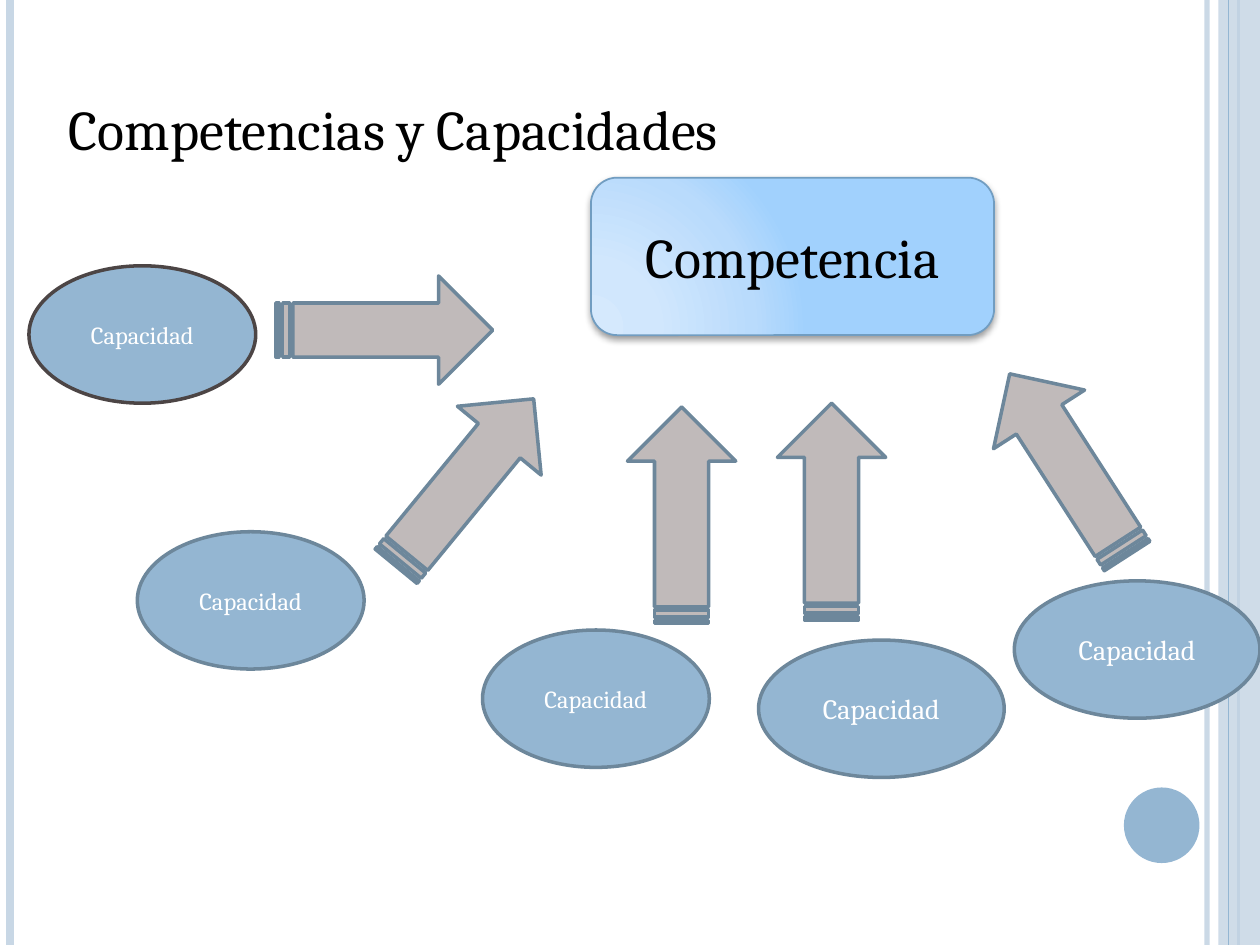
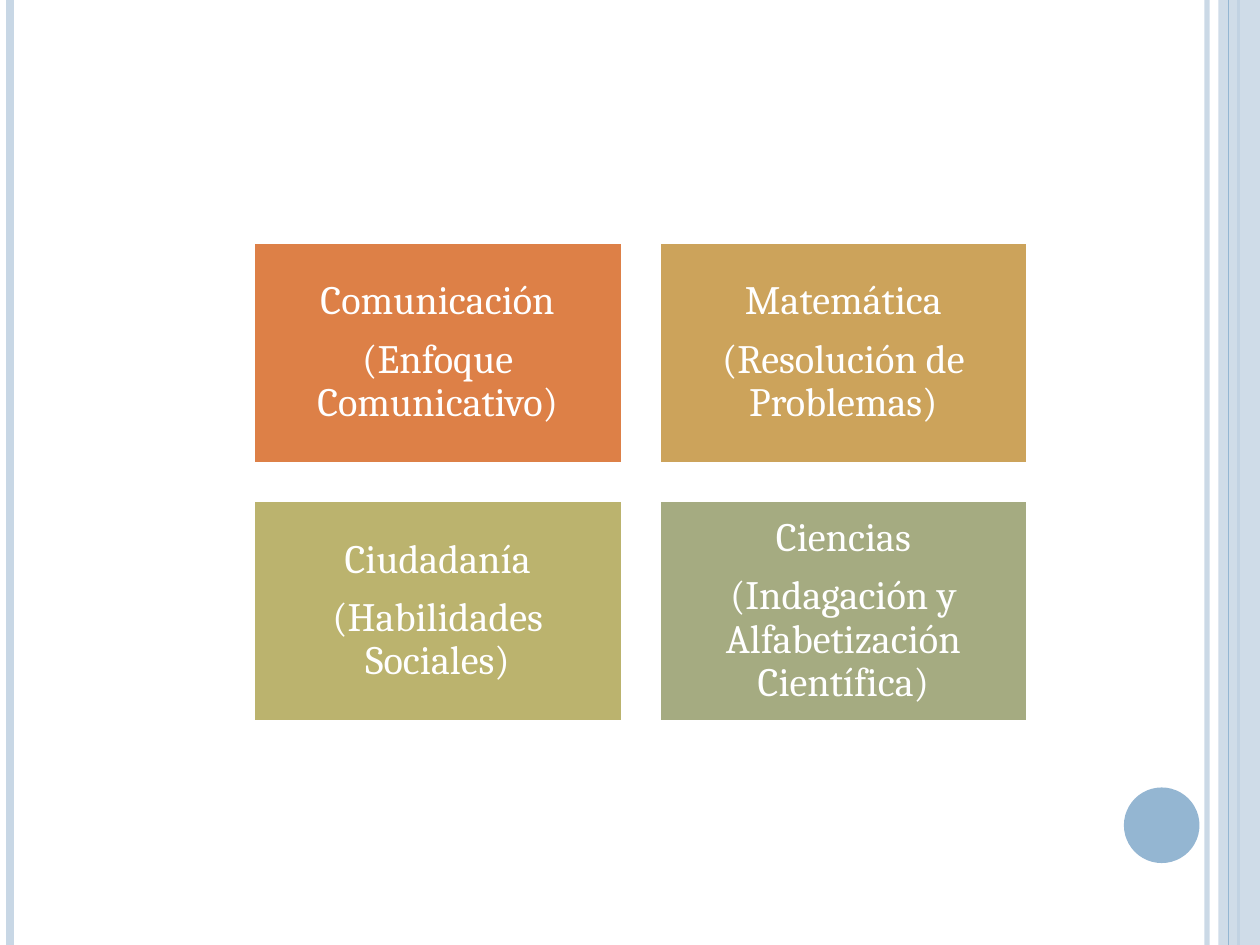
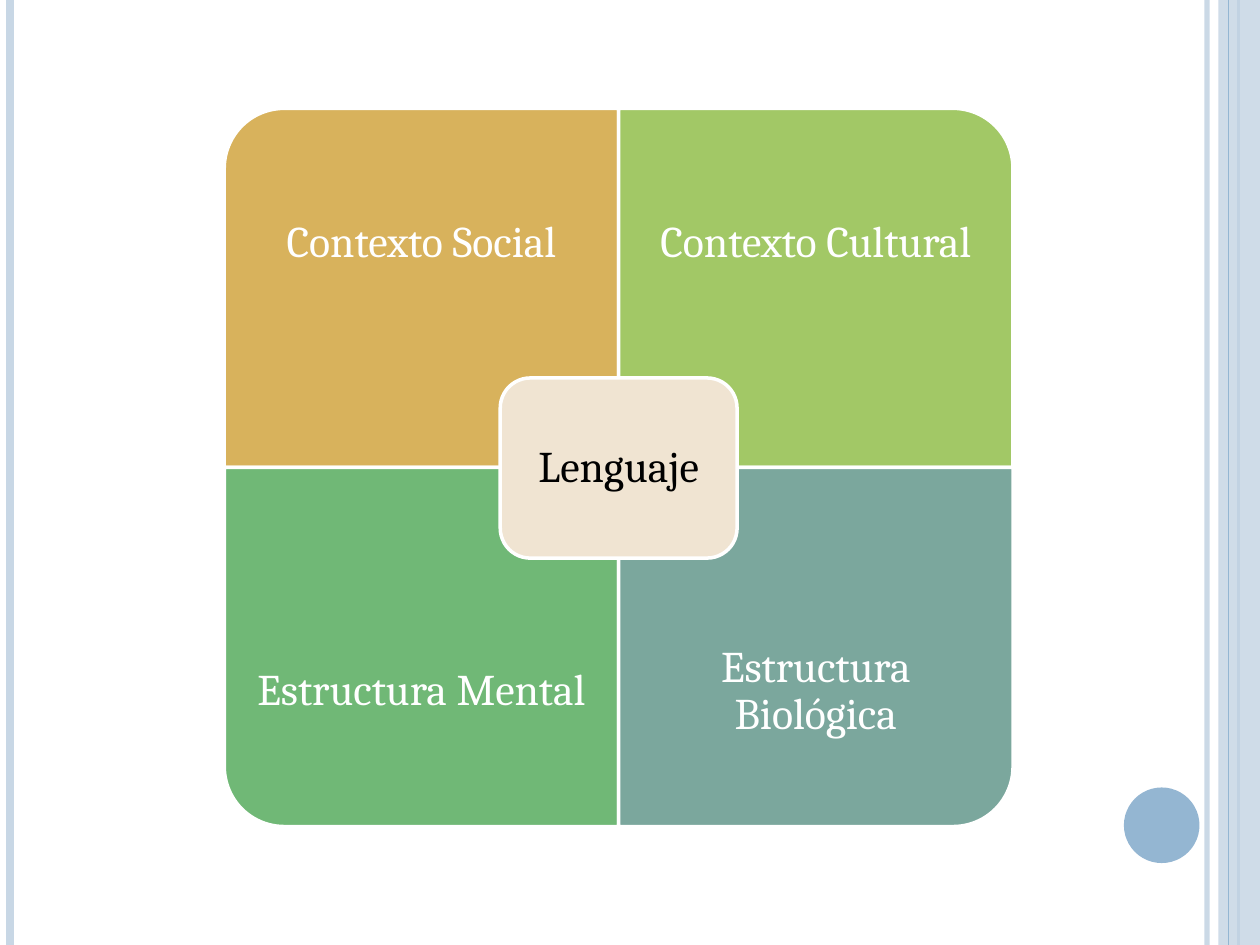
from typing import NamedTuple

from pptx import Presentation
from pptx.dml.color import RGBColor
from pptx.enum.shapes import MSO_CONNECTOR, MSO_SHAPE
from pptx.enum.text import MSO_ANCHOR, PP_ALIGN
from pptx.oxml import parse_xml
from pptx.oxml.ns import nsdecls, qn
from pptx.oxml.xmlchemy import OxmlElement
from pptx.util import Inches, Pt

FONT = "Cambria"
WHITE = "FFFFFF"
BLACK = "000000"
BLUE = "94B6D2"
PALE_BLUE = "C8D7E5"
SLATE = "6D879B"
ARROW_GREY = "C0BABA"
SLIDE_WIDTH, SLIDE_HEIGHT = 10, 7.5


class Box(NamedTuple):
    """Left, top, width and height in inches."""
    left: float
    top: float
    width: float
    height: float

    def lengths(self) -> tuple:
        """Return the four measures as lengths."""
        return tuple(Inches(value) for value in self)


class Rail(NamedTuple):
    """A vertical line that runs the full height of the slide."""
    x: float
    color: str
    width: float
    opacity: int = 100


class Arrow(NamedTuple):
    """A striped arrow, turned about its centre."""
    left: float
    top: float
    rotation: float


class Capacity(NamedTuple):
    """An ellipse that stands for one capacity."""
    left: float
    top: float
    width: float = 1.8
    size: int = 14
    outline: str = SLATE


class Area(NamedTuple):
    """A curriculum area with its approach."""
    name: str
    approach: str
    color: str


class Quadrant(NamedTuple):
    """A quarter of the language matrix."""
    label: str
    color: str
    rotation: int


LOWER_RAILS = [Rail(9.58, PALE_BLUE, 3, 93), Rail(0.08, PALE_BLUE, 4.5), Rail(9.83, BLUE, 1.5)]
UPPER_RAIL = Rail(9.75, BLUE, 0.75)

ARROWS = [
    Arrow(2.19, 2.19, 0),
    Arrow(2.83, 3.4, 309.4),
    Arrow(4.55, 3.66, 270),
    Arrow(5.74, 3.63, 270),
    Arrow(7.62, 3.26, 237.2),
]
CAPACITIES = [
    Capacity(0.23, 2.11, outline="4C4545"),
    Capacity(1.09, 4.22),
    Capacity(3.83, 5),
    Capacity(6.02, 5.08, 1.95, 16),
    Capacity(8.05, 4.61, 1.95, 16),
]
AREAS = [
    Area("Comunicación", "(Enfoque Comunicativo)", "DD8047"),
    Area("Matemática", "(Resolución de Problemas)", "CCA35B"),
    Area("Ciudadanía", "(Habilidades Sociales)", "BBB36E"),
    Area("Ciencias", "(Indagación y Alfabetización Científica)", "A5AB81"),
]
QUADRANTS = [
    Quadrant("Contexto Social", "D8B25C", 270),
    Quadrant("Contexto Cultural", "A2C866", 0),
    Quadrant("Estructura Mental", "70B876", 180),
    Quadrant("Estructura Biológica", "7BA79D", 90),
]


def rgb(color: str) -> RGBColor:
    """Turn a hex string into a colour."""
    return RGBColor.from_string(color)


def set_opacity(properties, opacity: int) -> None:
    """Make every plain colour below the given properties translucent."""
    for color in properties.iter(qn("a:srgbClr")):
        alpha = OxmlElement("a:alpha")
        alpha.set("val", str(opacity * 1000))
        color.append(alpha)


def write(shape, *texts: str, size: float = 14, color: str = WHITE, inset: float | None = None,
          line_spacing: float | None = None, gap: float = 0,
          anchor: MSO_ANCHOR = MSO_ANCHOR.MIDDLE) -> None:
    """Write centred paragraphs into a shape."""
    frame = shape.text_frame
    frame.word_wrap = True
    frame.vertical_anchor = anchor
    if inset is not None:
        frame.margin_left = frame.margin_right = Inches(inset)
        frame.margin_top = frame.margin_bottom = Inches(inset)
    for index, text in enumerate(texts):
        paragraph = frame.add_paragraph() if index else frame.paragraphs[0]
        paragraph.alignment = PP_ALIGN.CENTER
        if line_spacing:
            paragraph.line_spacing = line_spacing
        if index:
            paragraph.space_before = Pt(gap)
        run = paragraph.add_run()
        run.text = text
        run.font.name = FONT
        run.font.size = Pt(size)
        run.font.color.rgb = rgb(color)


def add_figure(slide, kind: MSO_SHAPE, box: Box, fill: str, outline: str | None = None,
               width: float = 2, rotation: float = 0):
    """Add a flat preset shape."""
    shape = slide.shapes.add_shape(kind, *box.lengths())
    shape.shadow.inherit = False
    shape.rotation = rotation
    shape.fill.solid()
    shape.fill.fore_color.rgb = rgb(fill)
    if outline:
        shape.line.color.rgb = rgb(outline)
        shape.line.width = Pt(width)
    else:
        shape.line.fill.background()
    return shape


def add_rail(slide, rail: Rail) -> None:
    """Draw one full-height line."""
    x = Inches(rail.x)
    connector = slide.shapes.add_connector(MSO_CONNECTOR.STRAIGHT, x, 0, x, Inches(SLIDE_HEIGHT))
    connector.line.color.rgb = rgb(rail.color)
    connector.line.width = Pt(rail.width)
    properties = connector.element.spPr
    if rail.opacity < 100:
        set_opacity(properties, rail.opacity)
    properties.append(OxmlElement("a:effectLst"))


def add_themed_slide(presentation):
    """Add a blank slide with the side rails, band and disc."""
    slide = presentation.slides.add_slide(presentation.slide_layouts[6])
    for rail in LOWER_RAILS:
        add_rail(slide, rail)
    band = Box(9.67, 0, SLIDE_WIDTH - 9.67, SLIDE_HEIGHT)
    set_opacity(add_figure(slide, MSO_SHAPE.RECTANGLE, band, PALE_BLUE).element.spPr, 87)
    add_rail(slide, UPPER_RAIL)
    add_figure(slide, MSO_SHAPE.OVAL, Box(8.92, 6.25, 0.6, 0.6), BLUE)
    return slide


def add_glow(shape) -> None:
    """Give a shape a circular blue gradient and a soft drop shadow."""
    stops = {0: "D5E9FD", 30: "D1E7FD", 75: "B9DBFC", 100: "A1D1FD"}
    stop_xml = "".join(f'<a:gs pos="{position * 1000}"><a:srgbClr val="{color}"/></a:gs>'
                       for position, color in stops.items())
    gradient = parse_xml(
        f'<a:gradFill {nsdecls("a")} rotWithShape="1"><a:gsLst>{stop_xml}</a:gsLst>'
        '<a:path path="circle"><a:fillToRect l="5000" t="100000" r="120000" b="10000"/></a:path>'
        '</a:gradFill>')
    shadow = parse_xml(
        f'<a:outerShdw {nsdecls("a")} blurRad="{Pt(4)}" dist="{Pt(2)}" dir="5400000" '
        'rotWithShape="0"><a:srgbClr val="000000"><a:alpha val="40000"/></a:srgbClr></a:outerShdw>')
    properties = shape.element.spPr
    properties.replace(properties.find(qn("a:solidFill")), gradient)
    properties.find(qn("a:effectLst")).append(shadow)


def build_competency_slide(presentation) -> None:
    """Show the capacities that lead to a competency."""
    slide = add_themed_slide(presentation)
    competency = add_figure(slide, MSO_SHAPE.ROUNDED_RECTANGLE, Box(4.69, 1.41, 3.2, 1.25),
                            "A1D1FD", "719DC1", 1)
    add_glow(competency)
    write(competency, "Competencia", size=32, color=BLACK)
    title = slide.shapes.add_textbox(*Box(0.39, 0.7, 5.47, 1.18).lengths())
    write(title, "Competencias y Capacidades", size=32, color=BLACK, anchor=MSO_ANCHOR.TOP)
    for arrow in ARROWS:
        add_figure(slide, MSO_SHAPE.STRIPED_RIGHT_ARROW, Box(arrow.left, arrow.top, 1.72, 0.86),
                   ARROW_GREY, SLATE, rotation=arrow.rotation)
    for capacity in CAPACITIES:
        box = Box(capacity.left, capacity.top, capacity.width, 1.09)
        ellipse = add_figure(slide, MSO_SHAPE.OVAL, box, BLUE, capacity.outline)
        write(ellipse, "Capacidad", size=capacity.size)


def build_area_slide(presentation) -> None:
    """Show the curriculum areas in a grid of two by two."""
    slide = add_themed_slide(presentation)
    width, height, gap = 2.93, 1.76, 0.29
    for index, area in enumerate(AREAS):
        row, column = divmod(index, 2)
        box = Box(2.01 + column * (width + gap), 1.92 + row * (height + gap), width, height)
        card = add_figure(slide, MSO_SHAPE.RECTANGLE, box, area.color, WHITE)
        write(card, area.name, area.approach, size=23, inset=0.1, line_spacing=0.9, gap=8.5)


def build_language_slide(presentation) -> None:
    """Show language at the centre of four quadrants."""
    slide = add_themed_slide(presentation)
    left, top, width, height, label_height = 1.78, 0.86, 3.13, 2.85, 2.14
    for index, quadrant in enumerate(QUADRANTS):
        row, column = divmod(index, 2)
        x, y = left + column * width, top + row * height
        box = Box(x, y, width, height)
        if quadrant.rotation % 180:
            shift = (width - height) / 2
            box = Box(x + shift, y - shift, height, width)
        add_figure(slide, MSO_SHAPE.ROUND_1_RECTANGLE, box, quadrant.color, WHITE,
                   rotation=quadrant.rotation)
        label_top = y + row * (height - label_height)
        label = slide.shapes.add_textbox(*Box(x, label_top, width, label_height).lengths())
        write(label, quadrant.label, size=25, inset=0.19, line_spacing=0.9)
    center = add_figure(slide, MSO_SHAPE.ROUNDED_RECTANGLE, Box(3.97, 3, 1.88, 1.43),
                        "F0E4D2", WHITE)
    write(center, "Lenguaje", size=25, color=BLACK, inset=0.1, line_spacing=0.9)


def main() -> None:
    """Build and save the presentation."""
    presentation = Presentation()
    presentation.slide_width = Inches(SLIDE_WIDTH)
    presentation.slide_height = Inches(SLIDE_HEIGHT)
    build_competency_slide(presentation)
    build_area_slide(presentation)
    build_language_slide(presentation)
    presentation.save("out.pptx")


if __name__ == "__main__":
    main()
